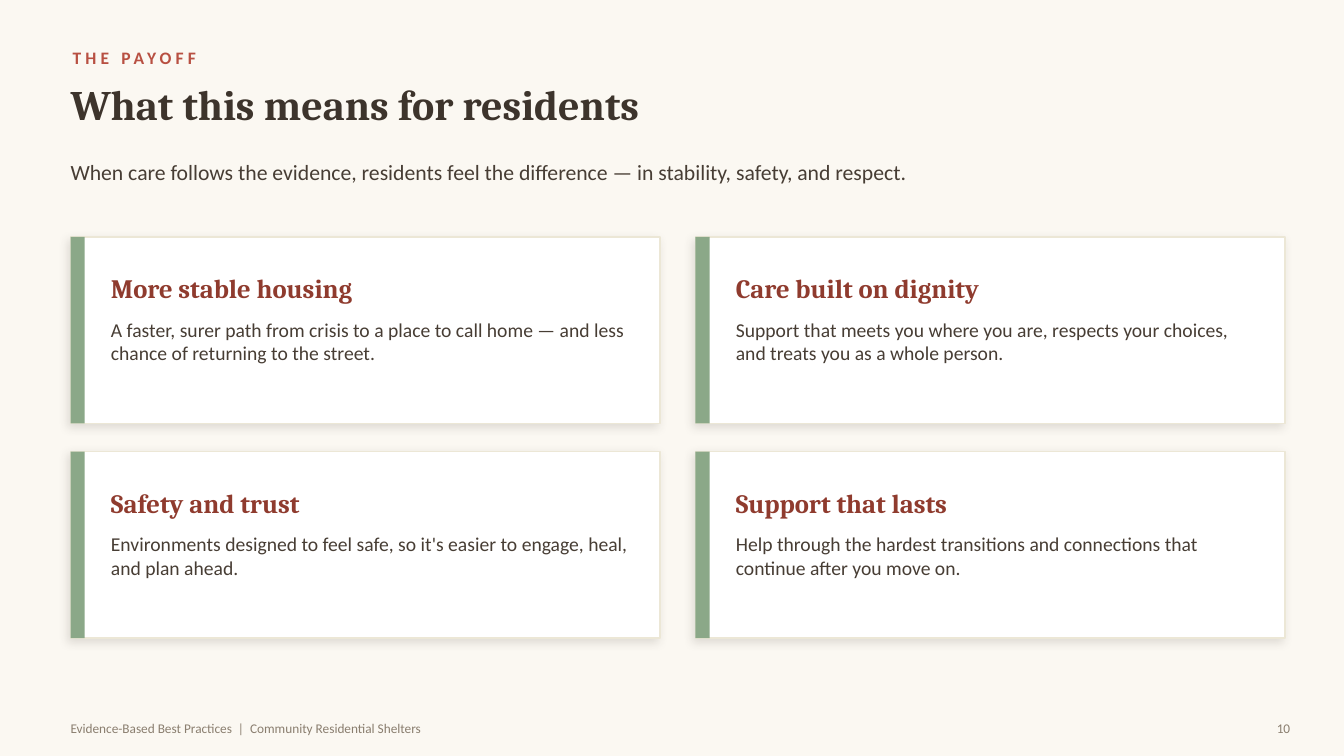
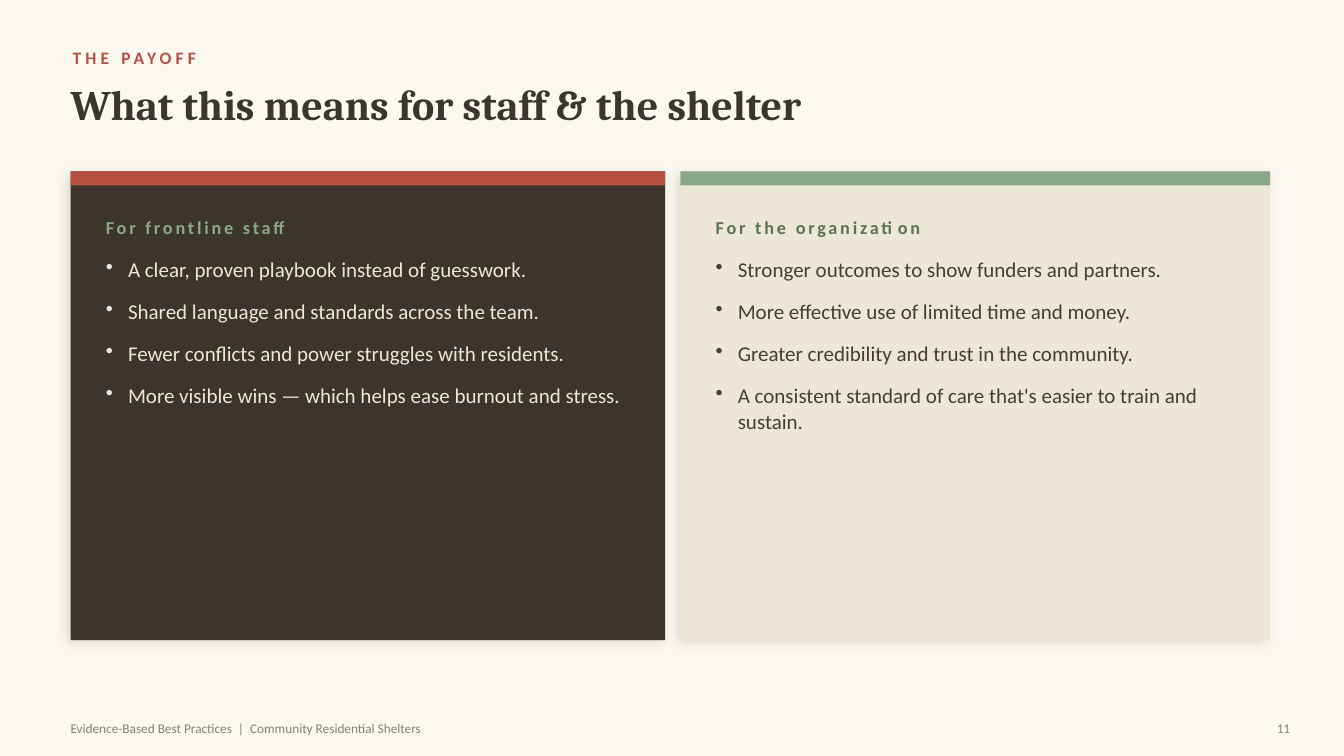
import pptx
import pptx.util
import pptx.dml.color
import pptx.enum.shapes
import pptx.enum.text
import pptx.oxml
import pptx.oxml.ns

Pt = pptx.util.Pt
RGBColor = pptx.dml.color.RGBColor
MIDDLE = pptx.enum.text.MSO_ANCHOR.MIDDLE
TOP = pptx.enum.text.MSO_ANCHOR.TOP
LEFT = pptx.enum.text.PP_ALIGN.LEFT
RIGHT = pptx.enum.text.PP_ALIGN.RIGHT

# Shared style
CREAM = RGBColor(0xFB, 0xF8, 0xF2)
SAND = RGBColor(0xEC, 0xE7, 0xD6)
WHITE = RGBColor(0xFF, 0xFF, 0xFF)
ESPRESSO = RGBColor(0x3D, 0x34, 0x2C)
BODY = RGBColor(0x47, 0x3D, 0x34)
MUTED = RGBColor(0x8A, 0x7E, 0x6F)
TERRACOTTA = RGBColor(0xB8, 0x50, 0x42)
BRICK = RGBColor(0x8F, 0x3B, 0x2E)
SAGE = RGBColor(0x8B, 0xA8, 0x88)
MOSS = RGBColor(0x5C, 0x73, 0x57)
SERIF, SANS = "Cambria", "Calibri"
MARGIN = 50.4
ACCENT = 10.08

# Content
EYEBROW = "THE PAYOFF"
FOOTER = "Evidence-Based Best Practices  |  Community Residential Shelters"
RESIDENTS_TITLE = "What this means for residents"
RESIDENTS_LEAD = ("When care follows the evidence, residents feel the difference "
                  "— in stability, safety, and respect.")
RESIDENT_CARDS = [
    ("More stable housing",
     "A faster, surer path from crisis to a place to call home "
     "— and less chance of returning to the street."),
    ("Care built on dignity",
     "Support that meets you where you are, respects your choices, "
     "and treats you as a whole person."),
    ("Safety and trust",
     "Environments designed to feel safe, so it's easier to engage, heal, "
     "and plan ahead."),
    ("Support that lasts",
     "Help through the hardest transitions and connections that continue "
     "after you move on."),
]
STAFF_TITLE = "What this means for staff & the shelter"
STAFF_PANELS = [
    {"heading": "For frontline staff", "width": 424.8, "fill": ESPRESSO,
     "band": TERRACOTTA, "heading_color": SAGE, "text_color": SAND,
     "points": ["A clear, proven playbook instead of guesswork.",
                "Shared language and standards across the team.",
                "Fewer conflicts and power struggles with residents.",
                "More visible wins — which helps ease burnout and stress."]},
    {"heading": "For the organization", "width": 421.2, "fill": SAND,
     "band": SAGE, "heading_color": MOSS, "text_color": BODY,
     "points": ["Stronger outcomes to show funders and partners.",
                "More effective use of limited time and money.",
                "Greater credibility and trust in the community.",
                "A consistent standard of care that's easier to train and sustain."]},
]


def add_text(slide, frame, lines, size, color, font=SANS, bold=False,
             spacing=0, anchor=TOP, align=LEFT, bullets=False):
    """Text box without margins; lines is one string or a list of them."""
    box = slide.shapes.add_textbox(*(Pt(length) for length in frame))
    text_frame = box.text_frame
    text_frame.word_wrap = True
    text_frame.vertical_anchor = anchor
    text_frame.margin_left = text_frame.margin_right = 0
    text_frame.margin_top = text_frame.margin_bottom = 0
    text_frame.text = lines if isinstance(lines, str) else "\n".join(lines)
    for para in text_frame.paragraphs:
        para.alignment = align
        if bullets:
            add_bullet(para)
        for span in para.runs:
            span.font.name = font
            span.font.size = Pt(size)
            span.font.bold = bold
            span.font.color.rgb = color
            if spacing:
                span.font._element.set("spc", str(spacing * 100))


def add_bullet(para, indent=15.84):
    para.space_after = Pt(12)
    properties = para._p.get_or_add_pPr()
    properties.set("marL", str(Pt(indent)))
    properties.set("indent", str(-Pt(indent)))
    bullet = properties.makeelement(pptx.oxml.ns.qn("a:buChar"), {"char": "•"})
    properties.append(bullet)


def add_rect(slide, frame, fill, line=None, shadow=False):
    rect = slide.shapes.add_shape(pptx.enum.shapes.MSO_SHAPE.RECTANGLE,
                                  *(Pt(length) for length in frame))
    rect.shadow.inherit = False
    rect.fill.solid()
    rect.fill.fore_color.rgb = fill
    if line is None:
        rect.line.fill.background()
    else:
        rect.line.color.rgb = line
        rect.line.width = Pt(1)
    if shadow:
        effects = rect._element.spPr.find(pptx.oxml.ns.qn("a:effectLst"))
        effects.append(pptx.oxml.parse_xml(
            f'<a:outerShdw {pptx.oxml.ns.nsdecls("a")} blurRad="{Pt(7)}" '
            f'dist="{Pt(3)}" dir="{135 * 60000}" algn="bl" rotWithShape="0">'
            f'<a:srgbClr val="{ESPRESSO}"><a:alpha val="14000"/></a:srgbClr>'
            '</a:outerShdw>'))


def add_page(deck, title, number):
    """Slide with background, eyebrow, title and footer."""
    slide = deck.slides.add_slide(deck.slide_layouts[6])
    slide.background.fill.solid()
    slide.background.fill.fore_color.rgb = CREAM
    add_text(slide, (51.84, 30.24, 828, 21.6), EYEBROW, 12.5, TERRACOTTA,
             bold=True, spacing=3, anchor=MIDDLE)
    add_text(slide, (MARGIN, 56.16, 878.4, 64.8), title, 30, ESPRESSO, SERIF, bold=True)
    add_text(slide, (MARGIN, 508.32, 756, 23.04), FOOTER, 9.5, MUTED, anchor=MIDDLE)
    add_text(slide, (878.4, 508.32, 43.2, 23.04), str(number), 9.5, MUTED,
             anchor=MIDDLE, align=RIGHT)
    return slide


def build_residents(deck):
    slide = add_page(deck, RESIDENTS_TITLE, 10)
    add_text(slide, (MARGIN, 113.76, 856.8, 39.6), RESIDENTS_LEAD, 15.5, BODY)

    # Two by two grid of cards
    width, height, column_gap, row_gap = 421.2, 133.2, 25.2, 20.16
    for index, (heading, body) in enumerate(RESIDENT_CARDS):
        row, column = divmod(index, 2)
        left = MARGIN + column * (width + column_gap)
        top = 169.2 + row * (height + row_gap)
        add_rect(slide, (left, top, width, height), WHITE, line=SAND, shadow=True)
        add_rect(slide, (left, top, ACCENT, height), SAGE)
        text_left, text_width = left + 28.8, width - 50.4
        add_text(slide, (text_left, top + 18.72, text_width, 36), heading, 19,
                 BRICK, SERIF, bold=True, anchor=MIDDLE)
        add_text(slide, (text_left, top + 57.6, text_width, 64.8), body, 14, BODY)


def build_staff(deck):
    slide = add_page(deck, STAFF_TITLE, 11)

    # Side-by-side panels with a coloured top band
    left, top, height, gap, inset = MARGIN, 122.4, 334.8, 10.8, 25.2
    for panel in STAFF_PANELS:
        width = panel["width"]
        add_rect(slide, (left, top, width, height), panel["fill"], shadow=True)
        add_rect(slide, (left, top, width, ACCENT), panel["band"])
        add_text(slide, (left + inset, top + 25.2, 374.4, 28.8), panel["heading"],
                 13, panel["heading_color"], bold=True, spacing=2, anchor=MIDDLE)
        add_text(slide, (left + inset, top + 61.2, width - 46.8, 259.2),
                 panel["points"], 15, panel["text_color"], bullets=True)
        left += width + gap


def main():
    deck = pptx.Presentation()
    deck.slide_width, deck.slide_height = Pt(960), Pt(540)
    build_residents(deck)
    build_staff(deck)
    deck.save("out.pptx")


if __name__ == "__main__":
    main()
